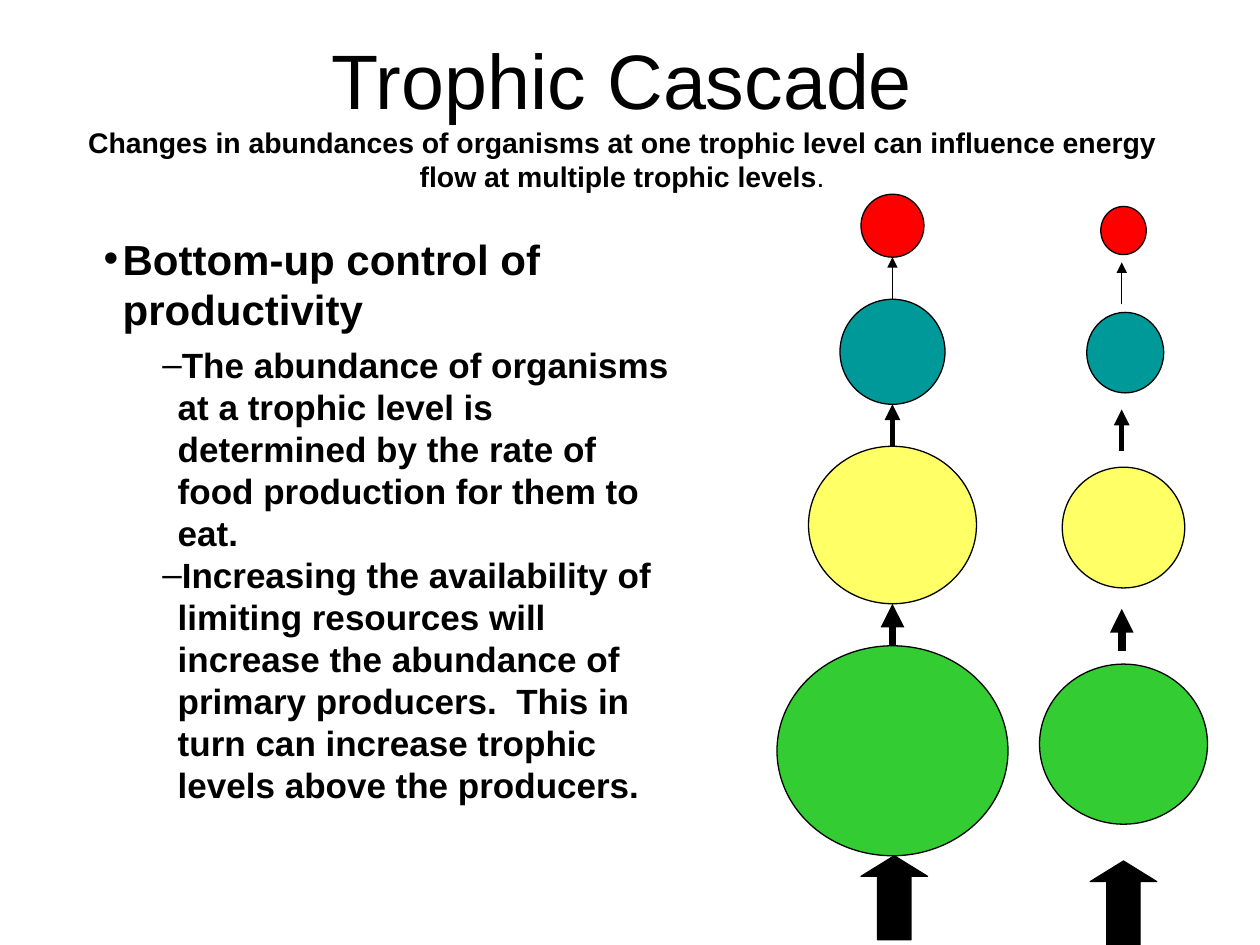
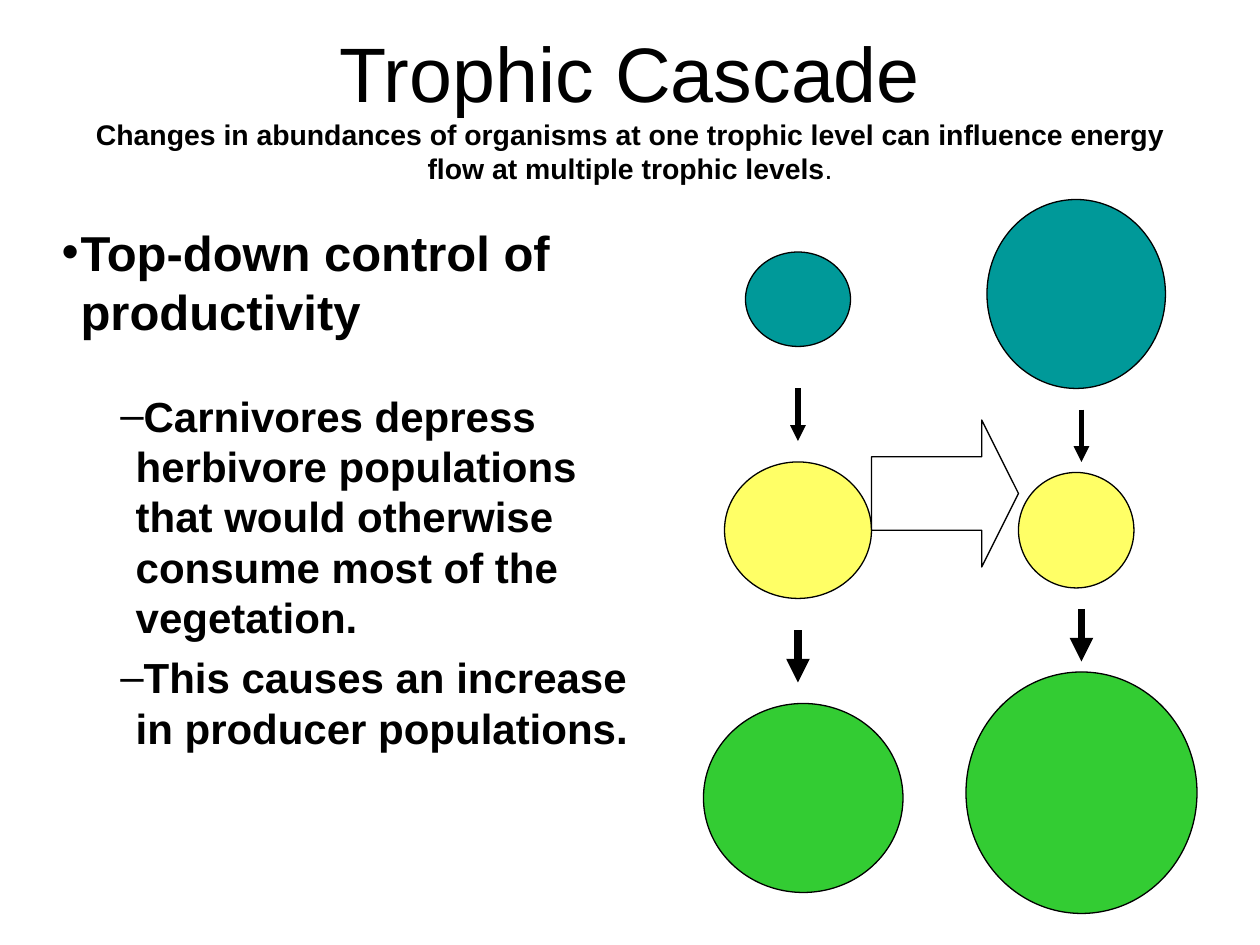
from lxml import etree
from pptx import Presentation
from pptx.dml.color import RGBColor
from pptx.enum import shapes, text
from pptx.oxml import ns
from pptx.util import Pt

BLACK = RGBColor(0x00, 0x00, 0x00)
WHITE = RGBColor(0xFF, 0xFF, 0xFF)
RED = RGBColor(0xFF, 0x00, 0x00)      # top carnivores
TEAL = RGBColor(0x00, 0x99, 0x99)     # carnivores
YELLOW = RGBColor(0xFF, 0xFF, 0x66)   # herbivores
GREEN = RGBColor(0x33, 0xCC, 0x33)    # producers

FONT = "Arial"
INSET = Pt(7.2)
THIN, MEDIUM, THICK = 0.75, 3, 4.5
# Bullet, left margin and hanging indent by level
LEVELS = [("•", 27, -10.8), ("–", 58.5, -8.8)]
TITLE = "Trophic Cascade"
SUBTITLE = ("Changes in abundances of organisms at one trophic level "
            "can influence energy flow at multiple trophic levels")


def add_run(p, words, size, bold=False):
    r = p.add_run()
    r.text = words
    r.font.name = FONT
    r.font.size = Pt(size)
    r.font.bold = bold
    r.font.color.rgb = BLACK


def add_text_frame(s, left, top, width, height):
    tf = s.shapes.add_textbox(Pt(left), Pt(top), Pt(width), Pt(height)).text_frame
    tf.word_wrap = True
    tf.vertical_anchor = text.MSO_ANCHOR.TOP
    tf.margin_left = tf.margin_right = tf.margin_top = tf.margin_bottom = INSET
    return tf


def add_title(s, left, top):
    p = add_text_frame(s, left, top, 648, 106).paragraphs[0]
    p.alignment = text.PP_ALIGN.CENTER
    add_run(p, TITLE, 44.1)
    p.add_line_break()
    add_run(p, SUBTITLE, 16.2, bold=True)
    add_run(p, ".", 16.2)


def set_bullet(p, level):
    char, margin, indent = LEVELS[level]
    pPr = p._p.get_or_add_pPr()
    pPr.set("marL", str(Pt(margin)))
    pPr.set("indent", str(Pt(indent)))
    color = etree.SubElement(pPr, ns.qn("a:buClr"))
    etree.SubElement(color, ns.qn("a:srgbClr"), val=str(BLACK))
    etree.SubElement(pPr, ns.qn("a:buFont"), typeface=FONT)
    etree.SubElement(pPr, ns.qn("a:buChar"), char=char)


def add_body(s, left, top, width, height, items):
    """Each item is (level, size, space before, words)."""
    tf = add_text_frame(s, left, top, width, height)
    for i, (level, size, space, words) in enumerate(items):
        p = tf.add_paragraph() if i else tf.paragraphs[0]
        p.level = level
        p.space_before = Pt(space)
        set_bullet(p, level)
        add_run(p, words, size, bold=True)


def add_shape(s, kind, left, top, width, height, fill):
    sp = s.shapes.add_shape(kind, Pt(left), Pt(top), Pt(width), Pt(height))
    sp.shadow.inherit = False
    sp.fill.solid()
    sp.fill.fore_color.rgb = fill
    sp.line.color.rgb = BLACK
    sp.line.width = Pt(THIN)
    return sp


def add_arrow(s, x, start, end, weight):
    c = s.shapes.add_connector(shapes.MSO_CONNECTOR.STRAIGHT,
                               Pt(x), Pt(start), Pt(x), Pt(end))
    c.line.color.rgb = BLACK
    c.line.width = Pt(weight)
    etree.SubElement(c.line._get_or_add_ln(), ns.qn("a:tailEnd"), type="triangle")
    etree.SubElement(c._element.spPr, ns.qn("a:effectLst"))


def add_food_chain(s, center, top, levels, arrows, arrow_shift=0):
    """Levels are (colour, shift, y, width, height), arrows (start, end, weight)."""
    for color, shift, y, width, height in levels:
        add_shape(s, shapes.MSO_SHAPE.OVAL, center + shift - width / 2, top + y,
                  width, height, color)
    for start, end, weight in arrows:
        add_arrow(s, center + arrow_shift, top + start, top + end, weight)


def add_resource_arrow(s, left, top):
    sp = add_shape(s, shapes.MSO_SHAPE.UP_ARROW, left, top, 38, 48, BLACK)
    sp.adjustments[0], sp.adjustments[1] = 0.5, 0.31


def add_bottom_up_slide(prs):
    s = prs.slides.add_slide(prs.slide_layouts[6])
    add_body(s, 36, 126, 354, 356, [
        (0, 24, 6.4, "Bottom-up control of productivity"),
        (1, 20, 5.6, "The abundance of organisms at a trophic level is determined "
                     "by the rate of food production for them to eat."),
        (1, 20, 0, "Increasing the availability of limiting resources will increase "
                   "the abundance of primary producers.  This in turn can increase "
                   "trophic levels above the producers."),
    ])
    # Energy flows upwards in both chains
    arrows = [(60, 36, THIN), (144, 120, MEDIUM), (258, 234, THICK)]
    add_food_chain(s, 510, 111, [
        (RED, 0, 0, 36, 36), (TEAL, 0, 60, 60, 60),
        (YELLOW, 0, 144, 96, 90), (GREEN, 0, 258, 132, 120),
    ], arrows)
    add_resource_arrow(s, 492, 489)
    add_food_chain(s, 642, 114, [
        (RED, 0, 4, 26, 27.5), (TEAL, 1, 64.5, 44, 46),
        (YELLOW, 0, 153, 70, 69), (GREEN, 0, 265.5, 96, 91.5),
    ], arrows, arrow_shift=-1)
    add_resource_arrow(s, 623, 492)
    add_title(s, 31.5, 11.5)


def add_top_down_slide(prs):
    s = prs.slides.add_slide(prs.slide_layouts[6])
    add_body(s, 12, 120, 366, 396, [
        (0, 28, 6.4, "Top-down control of productivity"),
        (1, 24, 28.5, "Carnivores depress herbivore populations that would "
                      "otherwise consume most of the vegetation."),
        (1, 24, 5.6, "This causes an increase in producer populations."),
    ])
    # Few carnivores, then many
    add_food_chain(s, 456, 144, [
        (TEAL, 0, 0, 60, 54), (YELLOW, 0, 120, 84, 78), (GREEN, 3, 258, 114, 108),
    ], [(78, 108, MEDIUM), (216, 246, THICK)])
    add_food_chain(s, 615, 114, [
        (TEAL, 0, 0, 102, 108), (YELLOW, 0, 156, 66, 66), (GREEN, 3, 270, 132, 138),
    ], [(120, 150, MEDIUM), (234, 264, THICK)], arrow_shift=3)
    # Change from the first chain to the second
    sp = add_shape(s, shapes.MSO_SHAPE.RIGHT_ARROW, 498, 240, 84, 84, WHITE)
    sp.adjustments[0], sp.adjustments[1] = 0.5, 0.25
    add_title(s, 36, 7)


def main():
    prs = Presentation()
    prs.slide_width, prs.slide_height = Pt(720), Pt(540)
    add_bottom_up_slide(prs)
    add_top_down_slide(prs)
    prs.save("out.pptx")


if __name__ == "__main__":
    main()
